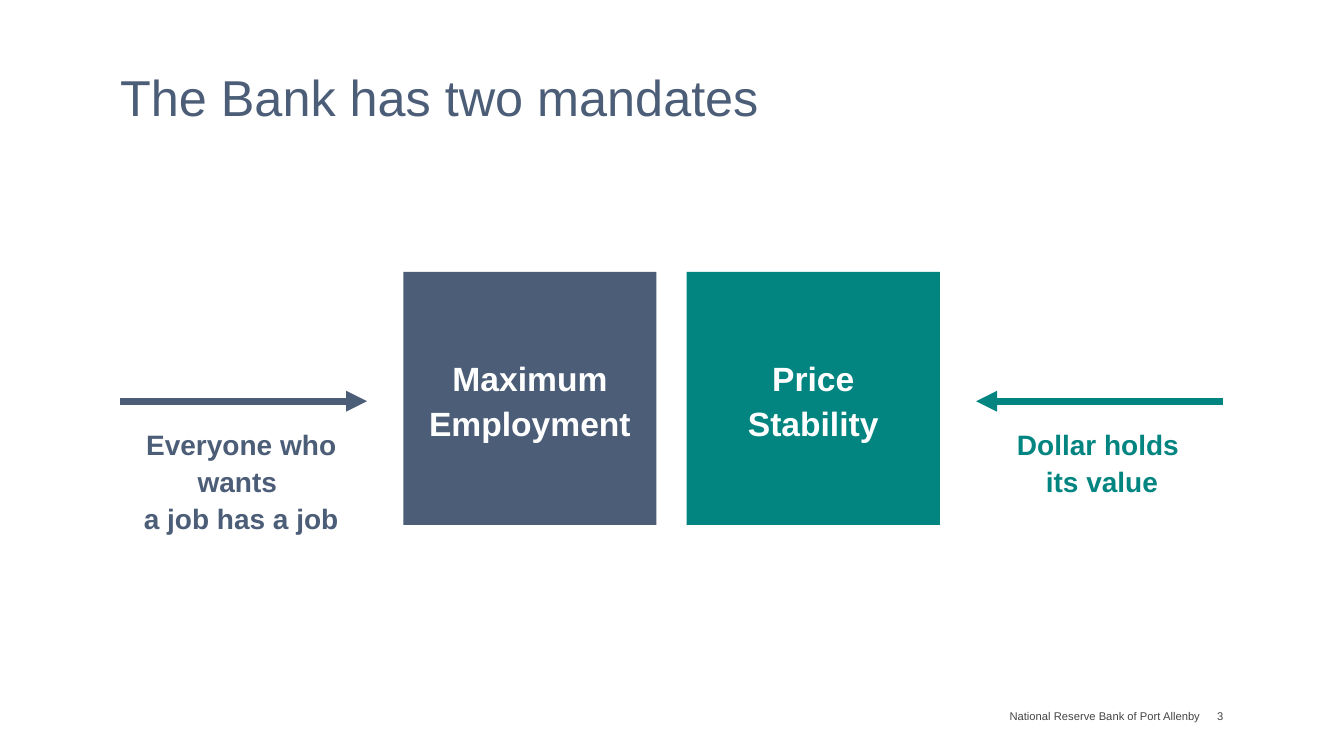
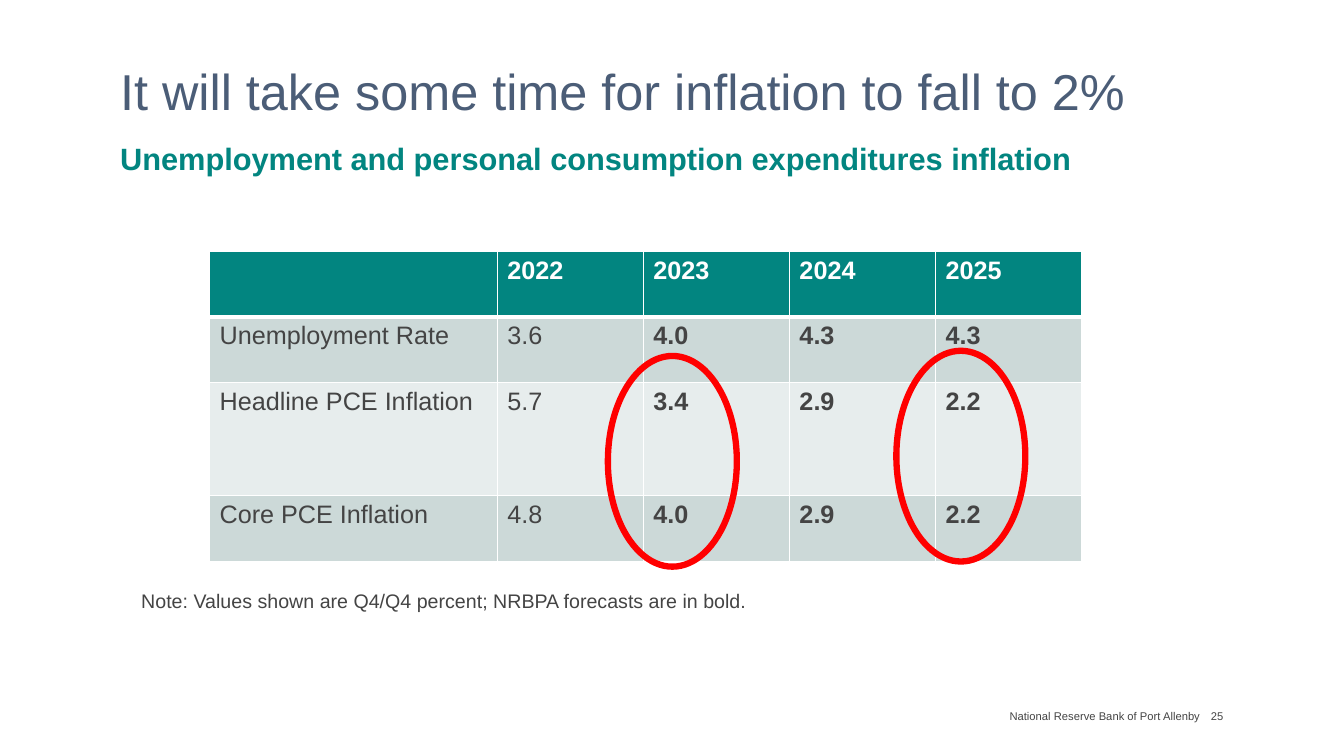
from dataclasses import dataclass

from lxml import etree
from pptx import Presentation
from pptx.dml.color import RGBColor
from pptx.enum.shapes import MSO_CONNECTOR, MSO_SHAPE
from pptx.enum.text import MSO_ANCHOR, PP_ALIGN
from pptx.oxml.ns import qn
from pptx.util import Cm, Pt

LEFT, MID, RIGHT = PP_ALIGN.LEFT, PP_ALIGN.CENTER, PP_ALIGN.RIGHT
TOP, CENTER, BOTTOM = MSO_ANCHOR.TOP, MSO_ANCHOR.MIDDLE, MSO_ANCHOR.BOTTOM
RECT, OVAL = MSO_SHAPE.RECTANGLE, MSO_SHAPE.OVAL
STRAIGHT = MSO_CONNECTOR.STRAIGHT


@dataclass(frozen=True)
class Theme:
    # Colours
    navy: str = "4B5D77"
    teal: str = "028580"
    white: str = "FFFFFF"
    ink: str = "444444"
    dark: str = "CCD9D8"
    pale: str = "E7EDED"
    red: str = "FF0000"
    # Type
    font: str = "Arial"
    title: int = 36
    box: int = 24
    sub: int = 22
    label: int = 20
    cell: int = 18
    note: int = 14
    foot: int = 8


T = Theme()
WIDE, HIGH = 33.87, 19.05
EDGE, SPAN = 3.03, 27.79
OWNER = "National Reserve Bank of Port Allenby"


def rgb(code):
    return RGBColor.from_string(code)


def write(frame, words, size=T.cell, color=T.ink, bold=False,
          align=LEFT, anchor=TOP, lead=1.0, before=0):
    """Fill a text frame with one formatted paragraph."""
    frame.word_wrap = True
    frame.vertical_anchor = anchor
    para = frame.paragraphs[0]
    para.text = words
    para.alignment = align
    para.line_spacing = lead
    para.space_before = Pt(before)
    for run in para.runs:
        font = run.font
        font.name, font.size, font.bold = T.font, Pt(size), bold
        font.color.rgb = rgb(color)


def label(slide, box, words, **style):
    """Add a text box without insets."""
    frame = slide.shapes.add_textbox(*map(Cm, box)).text_frame
    frame.margin_left = frame.margin_right = 0
    frame.margin_top = frame.margin_bottom = 0
    write(frame, words, **style)


def arrow(slide, start, end, y, color):
    line = slide.shapes.add_connector(
        STRAIGHT, Cm(start), Cm(y), Cm(end), Cm(y))
    line.line.width = Pt(5)
    line.line.color.rgb = rgb(color)
    props = line._element.spPr
    etree.SubElement(props.find(qn("a:ln")), qn("a:tailEnd"), type="triangle")
    etree.SubElement(props, qn("a:effectLst"))


def square(slide, box, words, color):
    shape = slide.shapes.add_shape(RECT, *map(Cm, box))
    shape.shadow.inherit = False
    shape.fill.solid()
    shape.fill.fore_color.rgb = rgb(color)
    shape.line.fill.background()
    write(shape.text_frame, words, size=T.box, color=T.white, bold=True,
          align=MID, anchor=CENTER, lead=1.1, before=10)


def ring(slide, box):
    shape = slide.shapes.add_shape(OVAL, *map(Cm, box))
    shape.shadow.inherit = False
    shape.fill.background()
    shape.line.width = Pt(4.5)
    shape.line.color.rgb = rgb(T.red)


def border(cell, below):
    """Draw white cell borders, with its own weight below."""
    props = cell._tc.get_or_add_tcPr()
    for side, width in (("L", 1), ("R", 1), ("T", 1), ("B", below)):
        line = etree.SubElement(props, qn("a:ln" + side), w=str(Pt(width)))
        fill = etree.SubElement(line, qn("a:solidFill"))
        etree.SubElement(fill, qn("a:srgbClr"), val=T.white)


def page(deck, title, number, rise=0):
    """Start a slide with its title and footer."""
    slide = deck.slides.add_slide(deck.slide_layouts[6])
    label(slide, (EDGE, -rise, SPAN, 3.2), title, size=T.title,
          color=T.navy, anchor=BOTTOM, lead=0.9)
    for x, width, words in ((24.43, 5.82, OWNER), (30.3, 0.53, number)):
        label(slide, (x, 17.8, width, 0.5), words, size=T.foot,
              align=RIGHT, anchor=CENTER)
    return slide


def goals(slide, box):
    """Two central squares, each with an arrow and a caption outside."""
    x, y, width, side = box
    gap, reach, room = 0.76, 6.22, 6.1
    right, mid = x + width, x + width / 2
    parts = (
        ("Maximum\nEmployment", "Everyone who wants \na job has a job",
         T.navy, mid - gap / 2 - side, x, x, x + reach),
        ("Price\nStability", "Dollar holds \nits value",
         T.teal, mid + gap / 2, right - room, right, right - reach),
    )
    for name, words, color, near, far, start, end in parts:
        square(slide, (near, y, side, side), name, color)
        arrow(slide, start, end, y + 3.26, color)
        label(slide, (far, y + 3.84, room, 4.4), words, size=T.label,
              color=color, bold=True, align=MID, lead=1.1, before=10)


def rates(slide, box):
    """Forecast table, with rings around two years of inflation."""
    x, y, width, height = box
    rows = (
        ("", "2022", "2023", "2024", "2025"),
        ("Unemployment Rate", "3.6", "4.0", "4.3", "4.3"),
        ("Headline PCE Inflation", "5.7", "3.4", "2.9", "2.2"),
        ("Core PCE Inflation", "4.8", "4.0", "2.9", "2.2"),
    )
    fills = (T.teal, T.dark, T.pale, T.dark)
    first, low = 7.25, 1.65
    year = (width - first) / 4
    table = slide.shapes.add_table(
        len(rows), len(rows[0]), *map(Cm, box)).table
    table.first_row = table.horz_banding = False
    for c, col in enumerate(table.columns):
        col.width = Cm(year if c else first)
    for r, row in enumerate(rows):
        table.rows[r].height = Cm(height - 3 * low if r == 2 else low)
        for c, words in enumerate(row):
            cell = table.cell(r, c)
            border(cell, 1 if r else 3)
            cell.fill.solid()
            cell.fill.fore_color.rgb = rgb(fills[r])
            write(cell.text_frame, words, bold=r == 0 or c > 1,
                  color=T.ink if r else T.white)
    # Rings
    for dx, dy in ((10.04, 2.63), (17.31, 2.5)):
        ring(slide, (x + dx, y + dy, 3.25, 5.31))


def main():
    deck = Presentation()
    deck.slide_width, deck.slide_height = Cm(WIDE), Cm(HIGH)

    # Mandates
    slide = page(deck, "The Bank has two mandates", "3")
    goals(slide, (EDGE, 6.85, SPAN, 6.38))

    # Forecast
    slide = page(deck, "It will take some time for inflation to fall to 2%",
                 "25", rise=0.13)
    label(slide, (EDGE, 3.63, SPAN, 0.94),
          "Unemployment and personal consumption expenditures inflation",
          size=T.sub, color=T.teal, bold=True, lead=0.9, before=10)
    rates(slide, (5.28, 6.34, 21.98, 7.8))
    label(slide, (3.56, 14.83, 25.4, 1.6),
          "Note: Values shown are Q4/Q4 percent; NRBPA forecasts are in bold.",
          size=T.note)

    deck.save("out.pptx")


if __name__ == "__main__":
    main()
